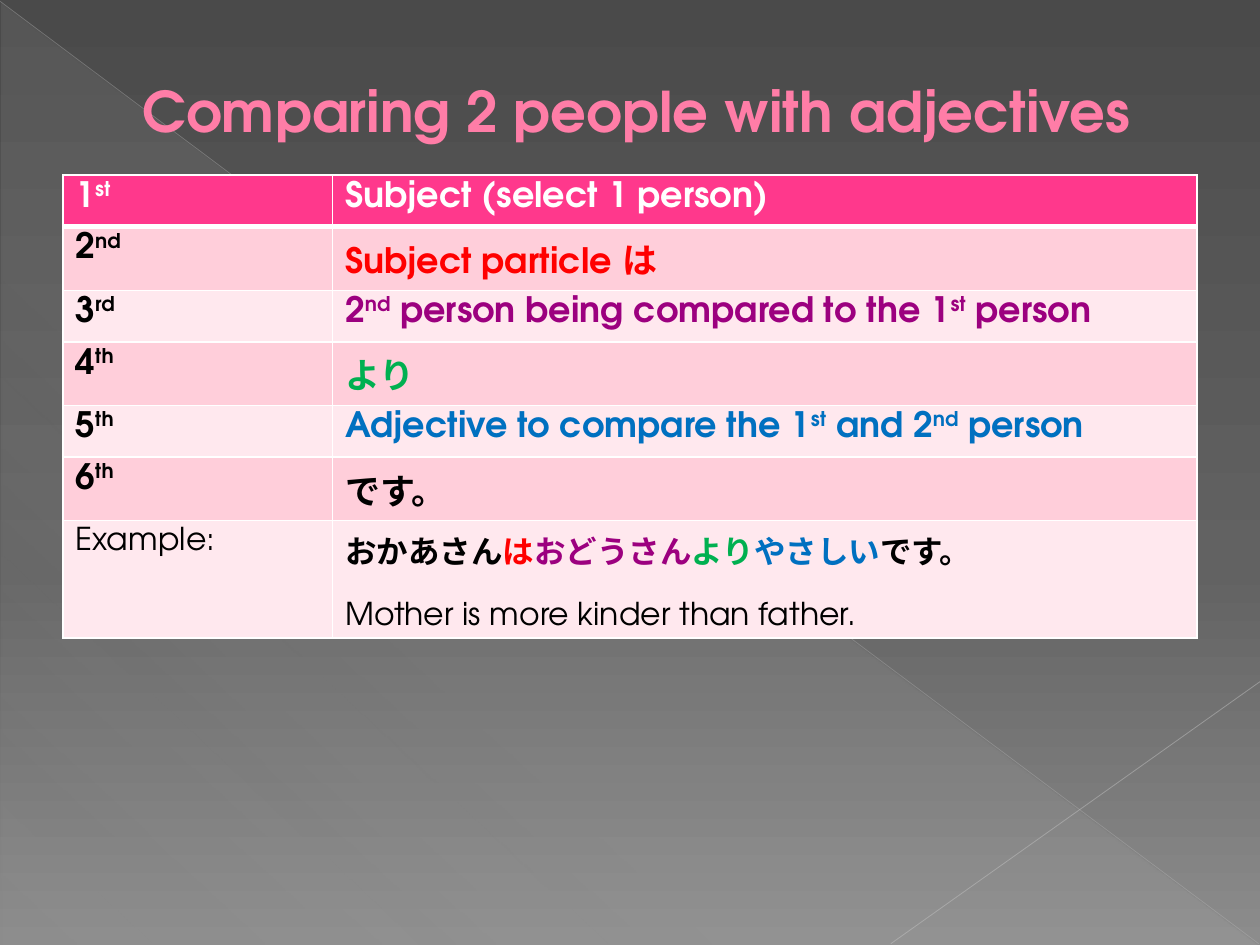
"""Build a slide that explains how to compare two people with Japanese adjectives."""
from lxml import etree
from pptx import Presentation
from pptx import util as u
from pptx.dml.color import RGBColor
from pptx.enum import shapes, text
from pptx.oxml.ns import qn

FONT = "TeX Gyre Adventor"
BLACK, WHITE, RED = "000000", "FFFFFF", "FF0000"
PURPLE, GREEN, BLUE = "9C007F", "00B050", "0070C0"
HEADER, DARK_BAND, LIGHT_BAND = "FF388C", "FFCEDA", "FFE8EE"
TITLE = "Comparing 2 people with adjectives"

BACKGROUND = [(0, "4A4A4A", 100), (60, "626262", 100), (100, "8C8C8C", 100)]
TRIANGLE = [(0, "D2D2D2", 10), (70, "D2D2D2", 8), (100, "D2D2D2", 1)]
LINES = [
    ((0, 0.01), (9.99, 7.49), "BFBFBF", 0.39, 35),
    ((10, 5.41), (7.07, 7.49), "C6C6C6", 0.47, 45),
]

# Each step: ordinal number, ordinal suffix, colour, text pieces (odd pieces are raised).
STEPS = [
    ("1", "st", WHITE, ["Subject (select 1 person)"]),
    ("2", "nd", RED, ["Subject particle は"]),
    ("3", "rd", PURPLE, ["2", "nd", " person being compared to the 1", "st", " person"]),
    ("4", "th", GREEN, ["より"]),
    ("5", "th", BLUE, ["Adjective to compare the 1", "st", " and 2", "nd", " person"]),
    ("6", "th", BLACK, ["です。"]),
]
EXAMPLE = [
    ("おかあさん", BLACK), ("は", RED), ("おどうさん", PURPLE),
    ("より", GREEN), ("やさしい", BLUE), ("です。", BLACK),
]
TRANSLATION = "Mother is more kinder than father."
COLUMNS, ROW_HEIGHT = (2.14, 6.86), 0.41


def rgb(value):
    return RGBColor.from_string(value)


def add_solid(parent, color, alpha=100):
    fill = etree.SubElement(parent, qn("a:solidFill"))
    tint = etree.SubElement(fill, qn("a:srgbClr"), val=color)
    if alpha < 100:
        etree.SubElement(tint, qn("a:alpha"), val=str(alpha * 1000))


def set_gradient(fill, element, stops, angle):
    fill.gradient()
    gradient = next(element.iter(qn("a:gradFill")))
    for child in list(gradient):
        gradient.remove(child)
    stop_list = etree.SubElement(gradient, qn("a:gsLst"))
    for position, color, alpha in stops:
        stop = etree.SubElement(stop_list, qn("a:gs"), pos=str(position * 1000))
        tint = etree.SubElement(stop, qn("a:srgbClr"), val=color)
        etree.SubElement(tint, qn("a:alpha"), val=str(alpha * 1000))
    etree.SubElement(gradient, qn("a:lin"), ang=str(angle * 60000), scaled="0")


def add_run(paragraph, words, color, size=20, bold=True, raised=False):
    run = paragraph.add_run()
    run.text = words
    run.font.name, run.font.size, run.font.bold = FONT, u.Pt(size), bold
    run.font.color.rgb = rgb(color)
    if raised:
        run.font._element.set("baseline", "30000")
    return run


def add_pieces(cell, pieces, color):
    for index, piece in enumerate(pieces):
        add_run(cell.text_frame.paragraphs[0], piece, color, raised=index % 2 == 1)


def style_cell(cell, row):
    properties = cell._tc.get_or_add_tcPr()
    thick = {0: "B", 1: "T"}.get(row)
    for side in "LRTB":
        width = 3 if side == thick else 1
        border = etree.SubElement(properties, qn("a:ln" + side), w=str(u.Pt(width)))
        add_solid(border, WHITE)
    cell.fill.solid()
    cell.fill.fore_color.rgb = rgb(HEADER if row == 0 else DARK_BAND if row % 2 else LIGHT_BAND)


def add_backdrop(slide):
    set_gradient(slide.background.fill, slide.element, BACKGROUND, 90)
    triangle = slide.shapes.add_shape(
        shapes.MSO_SHAPE.RIGHT_TRIANGLE, *map(u.Inches, (0.01, 0.02, 9.98, 7.48)))
    triangle.shadow.inherit = False
    triangle.line.fill.background()
    set_gradient(triangle.fill, triangle.element, TRIANGLE, 133)
    for start, end, color, width, alpha in LINES:
        line = slide.shapes.add_connector(
            shapes.MSO_CONNECTOR.STRAIGHT, *map(u.Inches, start + end))
        line.line.width = u.Pt(width)
        add_solid(line.line._get_or_add_ln(), color, alpha)
        etree.SubElement(line.element.spPr, qn("a:effectLst"))


def add_title(slide):
    title = slide.shapes.title
    slide.shapes.element.append(title.element)
    title.left, title.top, title.width, title.height = map(u.Inches, (0.5, 0.29, 9, 1.17))
    title.text_frame.vertical_anchor = text.MSO_ANCHOR.MIDDLE
    paragraph = title.text_frame.paragraphs[0]
    paragraph.alignment = text.PP_ALIGN.LEFT
    paragraph._p.get_or_add_pPr().set("marL", str(u.Inches(0.53)))
    run = add_run(paragraph, TITLE, "FF7DA7", 32)
    outline = etree.Element(qn("a:ln"), w=str(u.Pt(0.5)))
    add_solid(outline, "B12761")
    run.font._element.insert(0, outline)


def add_steps(slide):
    count = len(STEPS) + 1
    table = slide.shapes.add_table(
        count, 2, *map(u.Inches, (0.5, 1.39, sum(COLUMNS), count * ROW_HEIGHT))).table
    for column, width in zip(table.columns, COLUMNS):
        column.width = u.Inches(width)
    for index, row in enumerate(table.rows):
        row.height = u.Inches(ROW_HEIGHT)
        for cell in row.cells:
            style_cell(cell, index)
    for index, (number, suffix, color, pieces) in enumerate(STEPS):
        add_pieces(table.cell(index, 0), [number, suffix], BLACK if index else WHITE)
        add_pieces(table.cell(index, 1), pieces, color)
    label, example = (table.cell(count - 1, column).text_frame for column in (0, 1))
    add_run(label.paragraphs[0], "Example:", BLACK, 18, False)
    for words, color in EXAMPLE:
        add_run(example.paragraphs[0], words, color, 18)
    translation = example.add_paragraph()
    translation.space_before = u.Pt(17)
    add_run(translation, TRANSLATION, BLACK, 18, False)


def main():
    presentation = Presentation()
    presentation.slide_width, presentation.slide_height = u.Inches(10), u.Inches(7.5)
    slide = presentation.slides.add_slide(presentation.slide_layouts[5])
    add_backdrop(slide)
    add_title(slide)
    add_steps(slide)
    presentation.save("out.pptx")


if __name__ == "__main__":
    main()
